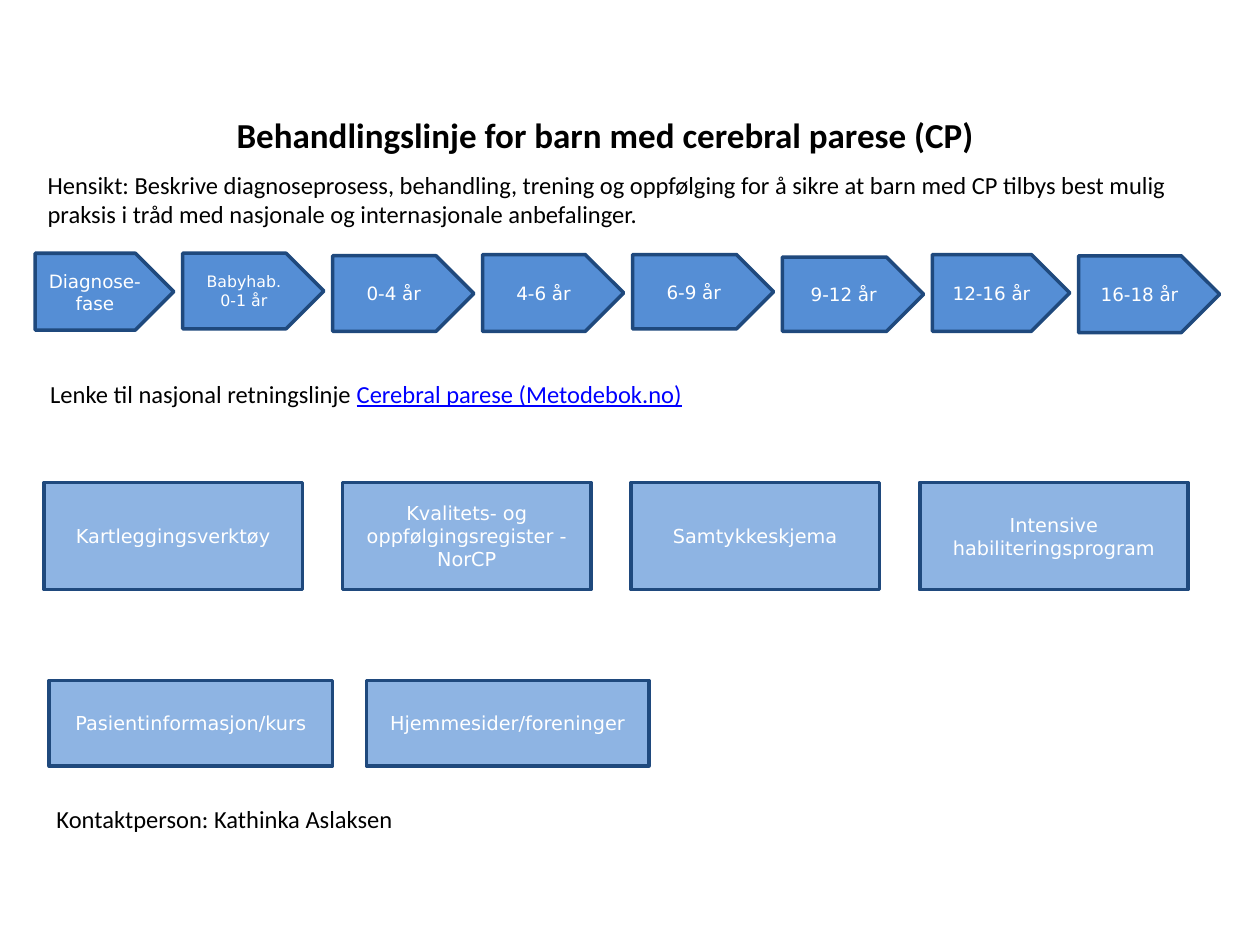
from pptx import Presentation
from pptx.dml.color import RGBColor
from pptx.enum.shapes import MSO_SHAPE
from pptx.enum.text import MSO_ANCHOR, PP_ALIGN
from pptx.util import Inches, Pt

BLACK, WHITE, LINK = "000000", "FFFFFF", "0000FF"
ARROW_FILL, BOX_FILL, OUTLINE = "558ED5", "8EB4E3", "1F497D"

# Label, left, top, width, height, text size; positions relative to the row
PHASES = [
    ("Diagnose-\nfase", 0, 0, 1.1, 0.61, 10.5),
    ("Babyhab.\n0-1 år", 1.17, 0, 1.12, 0.6, 9),
    ("0-4 år", 2.36, 0.02, 1.12, 0.6, 10.5),
    ("4-6 år", 3.55, 0.01, 1.12, 0.61, 10.5),
    ("6-9 år", 4.74, 0.01, 1.12, 0.59, 10.5),
    ("9-12 år", 5.93, 0.03, 1.12, 0.59, 10.5),
    ("12-16 år", 7.12, 0.01, 1.09, 0.61, 10.5),
    ("16-18 år", 8.28, 0.02, 1.12, 0.61, 10.5),
]
# Label and width; each row has one gap and one height
RESOURCES = [
    ("Kartleggingsverktøy", 2.05),
    ("Kvalitets- og oppfølgingsregister - NorCP", 1.97),
    ("Samtykkeskjema", 1.97),
    ("Intensive habiliteringsprogram", 2.13),
]
INFORMATION = [("Pasientinformasjon/kurs", 2.25), ("Hjemmesider/foreninger", 2.24)]


def color(value):
    return RGBColor.from_string(value)


def style_font(font, name, size, value, bold=False):
    font.name, font.size, font.bold = name, Pt(size), bold
    font.color.rgb = color(value)


def add_label(slide, kind, label, left, top, width, height, fill, size):
    shape = slide.shapes.add_shape(
        kind, Inches(left), Inches(top), Inches(width), Inches(height))
    shape.shadow.inherit = False
    shape.fill.solid()
    shape.fill.fore_color.rgb = color(fill)
    shape.line.color.rgb = color(OUTLINE)
    shape.line.width = Pt(2)
    text_frame = shape.text_frame
    text_frame.word_wrap = True
    text_frame.vertical_anchor = MSO_ANCHOR.MIDDLE
    text_frame.text = label
    for paragraph in text_frame.paragraphs:
        paragraph.alignment = PP_ALIGN.CENTER
        for run in paragraph.runs:
            style_font(run.font, "DejaVu Sans", size, WHITE)


def add_text(slide, text, left, top, width, height, size=14, bold=False):
    box = slide.shapes.add_textbox(
        Inches(left), Inches(top), Inches(width), Inches(height))
    box.text_frame.word_wrap = True
    box.text_frame.text = text
    paragraph = box.text_frame.paragraphs[0]
    style_font(paragraph.runs[0].font, "Calibri", size, BLACK, bold)
    return paragraph


def add_phases(slide, left, top):
    for label, x, y, width, height, size in PHASES:
        add_label(slide, MSO_SHAPE.PENTAGON, label, left + x, top + y,
                  width, height, ARROW_FILL, size)


def add_box_row(slide, boxes, left, top, height, gap):
    for label, width in boxes:
        add_label(slide, MSO_SHAPE.RECTANGLE, label, left, top,
                  width, height, BOX_FILL, 11)
        left += width + gap


def add_guideline(slide, left, top, width, height):
    paragraph = add_text(slide, "Lenke til nasjonal retningslinje ",
                         left, top, width, height)
    run = paragraph.add_run()
    run.text = "Cerebral parese (Metodebok.no)"
    style_font(run.font, "Calibri", 14, LINK)
    run.font.underline = True


def main():
    presentation = Presentation()
    presentation.slide_width, presentation.slide_height = Inches(10), Inches(7.5)
    slide = presentation.slides.add_slide(presentation.slide_layouts[6])

    # Title and purpose
    add_text(slide, "Behandlingslinje for barn med cerebral parese (CP)",
             1.78, 0.85, 6.64, 0.43, size=20, bold=True)
    add_text(slide, "Hensikt: Beskrive diagnoseprosess, behandling, trening og "
             "oppfølging for å sikre at barn med CP tilbys best mulig praksis i "
             "tråd med nasjonale og internasjonale anbefalinger.",
             0.28, 1.3, 9.4, 0.57)

    # Age phases and national guideline
    add_phases(slide, 0.28, 2.01)
    add_guideline(slide, 0.3, 2.96, 7.38, 0.34)

    # Resource boxes
    add_box_row(slide, RESOURCES, 0.35, 3.83, 0.85, 0.32)
    add_box_row(slide, INFORMATION, 0.39, 5.4, 0.68, 0.27)

    # Contact
    add_text(slide, "Kontaktperson: Kathinka Aslaksen", 0.35, 6.33, 4.24, 0.34)

    presentation.save("out.pptx")


if __name__ == "__main__":
    main()
